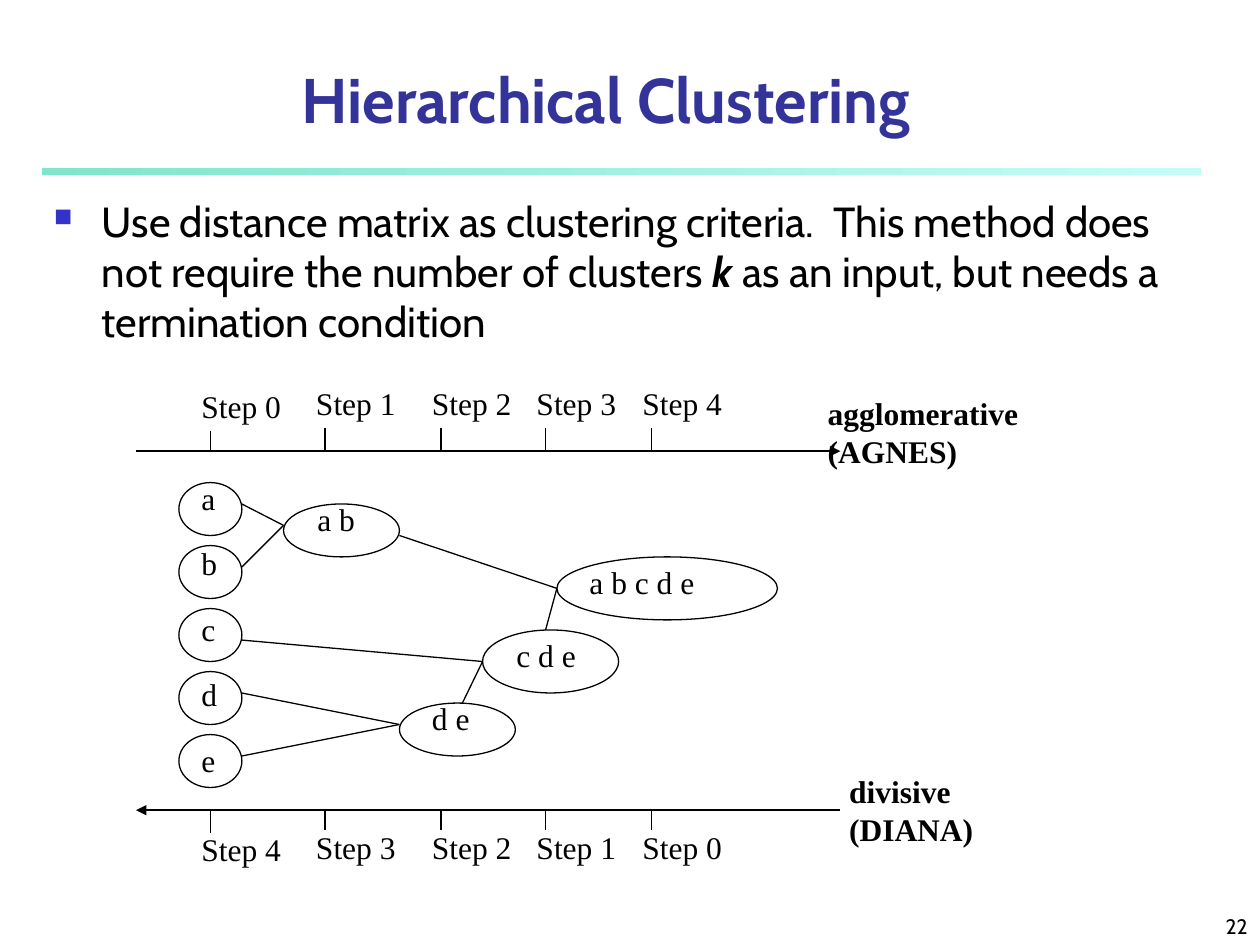
import pptx
import pptx.util
import pptx.dml.color
import pptx.enum.shapes
import pptx.enum.text
import pptx.oxml
import pptx.oxml.ns
from lxml import etree

Inches = pptx.util.Inches
RGBColor = pptx.dml.color.RGBColor
ALIGN = pptx.enum.text.PP_ALIGN
ANCHOR = pptx.enum.text.MSO_ANCHOR
SHAPE = pptx.enum.shapes.MSO_SHAPE

BLACK = RGBColor(0x00, 0x00, 0x00)
NAVY = RGBColor(0x33, 0x33, 0x99)
BULLET_BLUE = RGBColor(0x33, 0x33, 0xCC)
RULE_START = RGBColor(0x7F, 0xE6, 0xCB)
RULE_END = RGBColor(0xC5, 0xFC, 0xF7)

TITLE = "Hierarchical Clustering"
CRITERIA = [
    ("Use distance matrix as clustering criteria.  This method does not require the number of clusters ", {}),
    ("k", {"bold": True, "italic": True}),
    (" as an input, but needs a termination condition", {}),
]
PAGE_NUMBER = "22"

TITLE_FORMAT = {"name": "Cabin", "size": 36, "bold": True, "color": NAVY}
BODY_FORMAT = {"name": "Cabin", "size": 24, "color": BLACK}
NUMBER_FORMAT = {"name": "Cabin", "size": 12, "color": BLACK}
LABEL_FORMAT = {"name": "Times New Roman", "size": 18, "color": BLACK}
METHOD_FORMAT = {**LABEL_FORMAT, "bold": True}

TICKS = [1.67, 2.58, 3.5, 4.33, 5.17]
FIRST_TICK_DROP = 0.02
AXIS_LEFT, AXIS_RIGHT = 1.08, 6.67
AXES = [
    {"y": 3.58, "arrow": "tailEnd", "tick_top": 3.4, "label_top": 3.0, "steps": range(5),
     "method": ["agglomerative", "(AGNES)"], "method_box": (6.47, 3.08, 2.22, 0.9)},
    {"y": 6.43, "arrow": "headEnd", "tick_top": 6.42, "label_top": 6.52, "steps": range(4, -1, -1),
     "method": ["divisive", "(DIANA)"], "method_box": (6.64, 6.08, 1.52, 0.9)},
]

LEAVES = "abcde"
CLUSTERS = [
    ("a b", (2.25, 4.0, 0.92, 0.42), (2.42, 3.92)),
    ("d e", (3.17, 5.58, 0.92, 0.42), (3.33, 5.5)),
    ("c d e", (3.83, 5.0, 1.08, 0.5), (4.0, 5.0)),
    ("a b c d e", (4.42, 4.42, 1.75, 0.5), (4.58, 4.42)),
]
MERGES = [
    (1.92, 4.0, 2.25, 4.17),
    (1.92, 4.5, 2.25, 4.17),
    (1.92, 5.5, 3.17, 5.75),
    (1.92, 6.0, 3.17, 5.75),
    (1.92, 5.08, 3.83, 5.25),
    (3.67, 5.58, 3.83, 5.25),
    (3.17, 4.25, 4.42, 4.67),
    (4.33, 5.0, 4.42, 4.67),
]


def add_run(paragraph, text, text_format):
    run = paragraph.add_run()
    run.text = text
    for name, value in text_format.items():
        if name == "color":
            run.font.color.rgb = value
        elif name == "size":
            run.font.size = pptx.util.Pt(value)
        else:
            setattr(run.font, name, value)


def add_text(slide, box, lines, text_format, align=ALIGN.LEFT, anchor=ANCHOR.TOP, wrap=True):
    shape = slide.shapes.add_textbox(*map(Inches, box))
    frame = shape.text_frame
    frame.word_wrap = wrap
    frame.vertical_anchor = anchor
    for index, runs in enumerate(lines):
        paragraph = frame.add_paragraph() if index else frame.paragraphs[0]
        paragraph.alignment = align
        for text, changes in runs:
            add_run(paragraph, text, {**text_format, **changes})
    return shape


def add_label(slide, left, top, width, height, text):
    add_text(slide, (left, top, width, height), [[(text, {})]], LABEL_FORMAT, wrap=False)


def add_line(slide, ends, width=0.75, arrow=None):
    line = slide.shapes.add_connector(pptx.enum.shapes.MSO_CONNECTOR.STRAIGHT, *map(Inches, ends))
    line.line.color.rgb = BLACK
    line.line.width = pptx.util.Pt(width)
    if arrow:
        outline = line.line._get_or_add_ln()
        etree.SubElement(outline, pptx.oxml.ns.qn("a:" + arrow), type="triangle")
    etree.SubElement(line._element.spPr, pptx.oxml.ns.qn("a:effectLst"))


def add_ellipse(slide, box):
    shape = slide.shapes.add_shape(SHAPE.OVAL, *map(Inches, box))
    shape.shadow.inherit = False
    shape.fill.background()
    shape.line.color.rgb = BLACK
    shape.line.width = pptx.util.Pt(0.75)


def add_bullet(paragraph):
    properties = paragraph._p.get_or_add_pPr()
    properties.set("marL", str(Inches(0.38)))
    properties.set("indent", str(Inches(-0.38)))
    color = etree.SubElement(properties, pptx.oxml.ns.qn("a:buClr"))
    etree.SubElement(color, pptx.oxml.ns.qn("a:srgbClr"), val=str(BULLET_BLUE))
    etree.SubElement(properties, pptx.oxml.ns.qn("a:buSzPct"), val="60000")
    etree.SubElement(properties, pptx.oxml.ns.qn("a:buChar"), char="■")


def add_heading(slide):
    rule = slide.shapes.add_shape(SHAPE.RECTANGLE, *map(Inches, (0.33, 1.33, 9.2, 0.06)))
    rule.shadow.inherit = False
    rule.line.fill.background()
    rule.fill.gradient()
    rule.fill.gradient_angle = 0
    for stop, color in zip(rule.fill.gradient_stops, (RULE_START, RULE_END)):
        stop.color.rgb = color
    add_text(slide, (0.82, 0.54, 7.98, 0.48), [[(TITLE, {})]], TITLE_FORMAT, ALIGN.CENTER, ANCHOR.MIDDLE)
    body = add_text(slide, (0.33, 1.5, 9.08, 1.33), [CRITERIA], BODY_FORMAT)
    add_bullet(body.text_frame.paragraphs[0])


def add_axis(slide, axis):
    add_line(slide, (AXIS_LEFT, axis["y"], AXIS_RIGHT, axis["y"]), 1.5, axis["arrow"])
    for index, (x, step) in enumerate(zip(TICKS, axis["steps"])):
        drop = 0 if index else FIRST_TICK_DROP
        top = axis["tick_top"] + drop
        add_line(slide, (x, top, x, top + 0.17))
        add_label(slide, x - 0.17, axis["label_top"] + drop, 0.83, 0.4, f"Step {step}")
    add_text(slide, axis["method_box"], [[(line, {})] for line in axis["method"]], METHOD_FORMAT)


def add_tree(slide):
    for index, leaf in enumerate(LEAVES):
        add_label(slide, 1.5, 3.75 + 0.52 * index, 0.37, 0.5, leaf)
        add_ellipse(slide, (1.42, 3.83 + 0.5 * index, 0.5, 0.42))
    for text, box, (left, top) in CLUSTERS:
        add_label(slide, left, top, box[2] - 0.3, 0.5, text)
        add_ellipse(slide, box)
    for ends in MERGES:
        add_line(slide, ends)


def main():
    presentation = pptx.Presentation()
    presentation.slide_width = Inches(10)
    presentation.slide_height = Inches(7.5)
    slide = presentation.slides.add_slide(presentation.slide_layouts[6])
    add_heading(slide)
    for axis in AXES:
        add_axis(slide, axis)
    add_tree(slide)
    add_text(slide, (7.92, 7.08, 2.08, 0.42), [[(PAGE_NUMBER, {})]], NUMBER_FORMAT, ALIGN.RIGHT, ANCHOR.BOTTOM)
    presentation.save("out.pptx")


if __name__ == "__main__":
    main()
